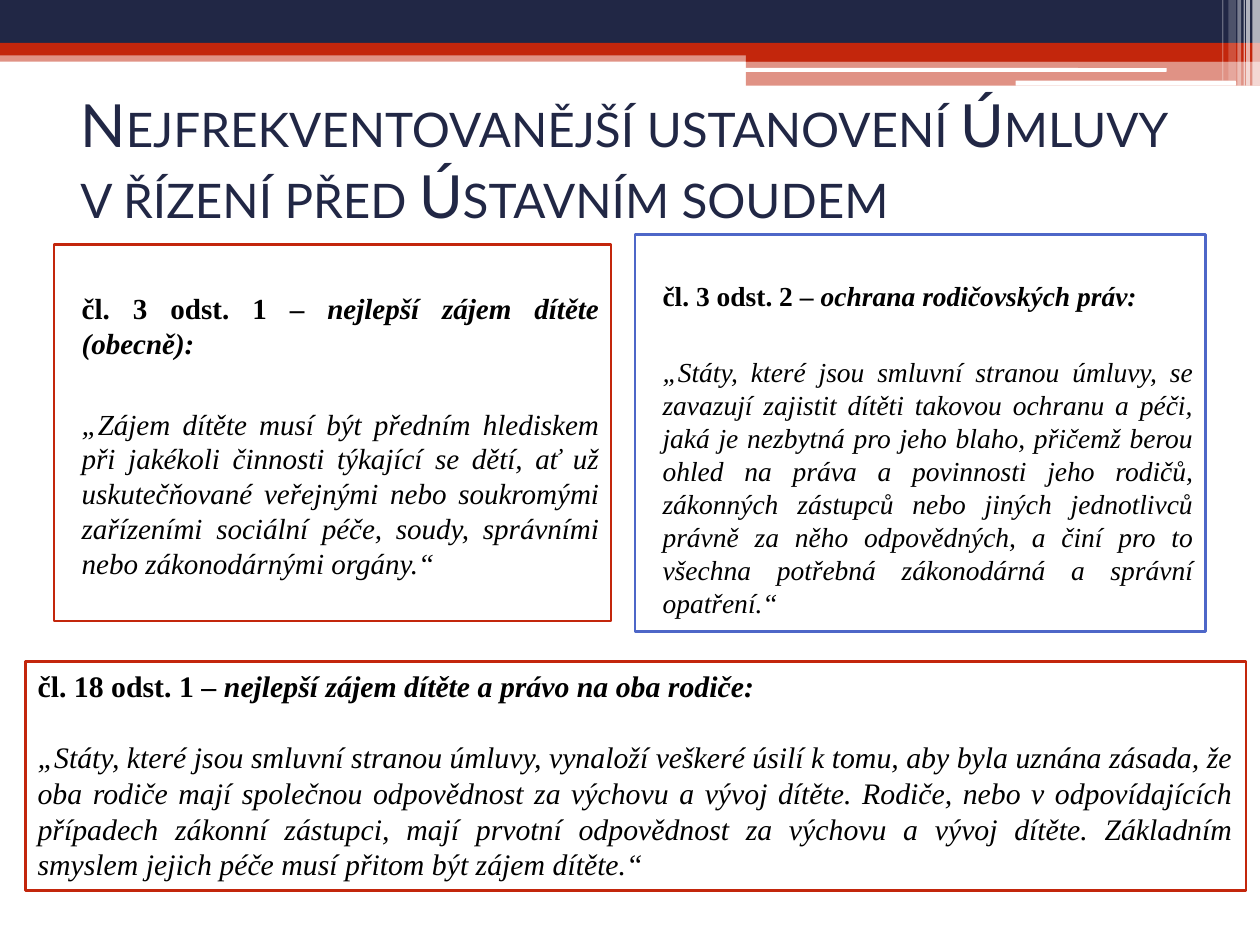
from typing import NamedTuple

from lxml.etree import SubElement
from pptx import Presentation
from pptx.dml.color import RGBColor
from pptx.enum.shapes import MSO_SHAPE as Shape
from pptx.enum.text import MSO_ANCHOR as Anchor, PP_ALIGN as Align
from pptx.oxml.ns import qn
from pptx.util import Inches, Pt

NAVY, RED, BLUE, WHITE, BLACK = "212745", "C3260C", "4E67C8", "FFFFFF", "000000"
LINE_HEIGHT = 1.2  # height of one text line relative to the font size


class Bar(NamedTuple):
    left: float
    top: float
    width: float
    height: float
    color: str
    opacity: int = 100
    kind: Shape = Shape.RECTANGLE


class Article(NamedTuple):
    left: float
    top: float
    width: float
    height: float
    border: str
    size: float
    number: str
    subject: str
    quote: str
    indent: float = 0
    spacing: float = 0
    lead_lines: int = 0


BARS = [
    Bar(0, 0.4, 10, 0.09, RED, 50),
    Bar(0, 0, 10, 0.34, NAVY),
    Bar(0, 0.34, 10, 0.1, RED),
    Bar(5.92, 0.39, 4.08, 0.1, RED),
    Bar(5.92, 0.48, 4.08, 0.2, RED, 50),
    Bar(5.91, 0.54, 3.35, 0.03, WHITE, kind=Shape.ROUNDED_RECTANGLE),
    Bar(8.06, 0.64, 1.75, 0.04, WHITE, kind=Shape.ROUNDED_RECTANGLE),
    Bar(9.94, 0, 0.06, 0.68, WHITE, 65),
    Bar(9.89, 0, 0.03, 0.68, WHITE, 65),
    Bar(9.87, 0, 0.01, 0.68, WHITE, 60),
    Bar(9.82, 0, 0.03, 0.68, WHITE, 40),
    Bar(9.75, 0, 0.06, 0.64, WHITE, 20),
    Bar(9.7, 0, 0.01, 0.64, WHITE, 30),
]

ARTICLES = [
    Article(
        0.43, 1.94, 4.42, 2.99, RED, 16.6,
        "čl. 3 odst. 1 – ", "nejlepší zájem dítěte (obecně):",
        "„Zájem dítěte musí být předním hlediskem při jakékoli činnosti týkající se "
        "dětí, ať už uskutečňované veřejnými nebo soukromými zařízeními sociální "
        "péče, soudy, správními nebo zákonodárnými orgány.“",
        indent=0.12, spacing=3, lead_lines=1,
    ),
    Article(
        5.04, 1.86, 4.53, 3.15, BLUE, 15.7,
        "čl. 3 odst. 2 – ", "ochrana rodičovských práv:",
        "„Státy, které jsou smluvní stranou úmluvy, se zavazují zajistit dítěti "
        "takovou ochranu a péči, jaká je nezbytná pro jeho blaho, přičemž berou "
        "ohled na práva a povinnosti jeho rodičů, zákonných zástupců nebo jiných "
        "jednotlivců právně za něho odpovědných, a činí pro to všechna potřebná "
        "zákonodárná a správní opatření.“",
        indent=0.12, spacing=3, lead_lines=1,
    ),
    Article(
        0.2, 5.25, 9.69, 1.82, RED, 17,
        "čl. 18 odst. 1 – ", "nejlepší zájem dítěte a právo na oba rodiče:",
        "„Státy, které jsou smluvní stranou úmluvy, vynaloží veškeré úsilí k tomu, "
        "aby byla uznána zásada, že oba rodiče mají společnou odpovědnost za výchovu "
        "a vývoj dítěte. Rodiče, nebo v odpovídajících případech zákonní zástupci, "
        "mají prvotní odpovědnost za výchovu a vývoj dítěte. Základním smyslem "
        "jejich péče musí přitom být zájem dítěte.“",
    ),
]


def rgb(color: str) -> RGBColor:
    return RGBColor.from_string(color)


def add_filled(slide, kind: Shape, box: tuple, color: str):
    shape = slide.shapes.add_shape(kind, *map(Inches, box))
    shape.shadow.inherit = False
    shape.fill.solid()
    shape.fill.fore_color.rgb = rgb(color)
    return shape


def add_bar(slide, bar: Bar) -> None:
    shape = add_filled(slide, bar.kind, bar[:4], bar.color)
    shape.line.fill.background()
    if bar.opacity < 100:
        color = shape._element.spPr.find(f"{qn('a:solidFill')}/{qn('a:srgbClr')}")
        SubElement(color, qn("a:alpha"), val=str(bar.opacity * 1000))


def add_title(slide, text: str) -> None:
    box = slide.shapes.add_textbox(Inches(0.54), Inches(0.68), Inches(9), Inches(1.17))
    frame = box.text_frame
    frame.word_wrap = True
    frame.vertical_anchor = Anchor.MIDDLE
    paragraph = frame.paragraphs[0]
    run = paragraph.add_run()
    run.text = text
    run._r.get_or_add_rPr().set("cap", "small")
    paragraph.font.name = "Lato"
    paragraph.font.size = Pt(34)
    paragraph.font.color.rgb = rgb(NAVY)


def add_article(slide, article: Article) -> None:
    shape = add_filled(slide, Shape.RECTANGLE, article[:4], WHITE)
    shape.line.color.rgb = rgb(article.border)
    shape.line.width = Pt(1.5)

    blank_line = article.size * LINE_HEIGHT + article.spacing
    frame = shape.text_frame
    frame.word_wrap = True
    frame.vertical_anchor = Anchor.TOP
    frame.margin_top = Inches(0.05) + Pt(article.lead_lines * blank_line)

    heading, quote = frame.paragraphs[0], frame.add_paragraph()
    for paragraph in (heading, quote):
        paragraph.alignment = Align.JUSTIFY
        paragraph._p.get_or_add_pPr().set("marL", str(Inches(article.indent)))
        paragraph.font.name = "Times New Roman"
        paragraph.font.size = Pt(article.size)
        paragraph.font.color.rgb = rgb(BLACK)

    heading.font.bold = True
    heading.add_run().text = article.number
    subject = heading.add_run()
    subject.text = article.subject
    subject.font.italic = True

    quote.font.italic = True
    quote.space_before = Pt(blank_line + article.spacing)
    quote.add_run().text = article.quote


def main() -> None:
    presentation = Presentation()
    presentation.slide_width, presentation.slide_height = Inches(10), Inches(7.5)
    slide = presentation.slides.add_slide(presentation.slide_layouts[6])
    for bar in BARS:
        add_bar(slide, bar)
    add_title(slide, "Nejfrekventovanější ustanovení Úmluvy v\u00a0řízení před Ústavním soudem")
    for article in ARTICLES:
        add_article(slide, article)
    presentation.save("out.pptx")


if __name__ == "__main__":
    main()
